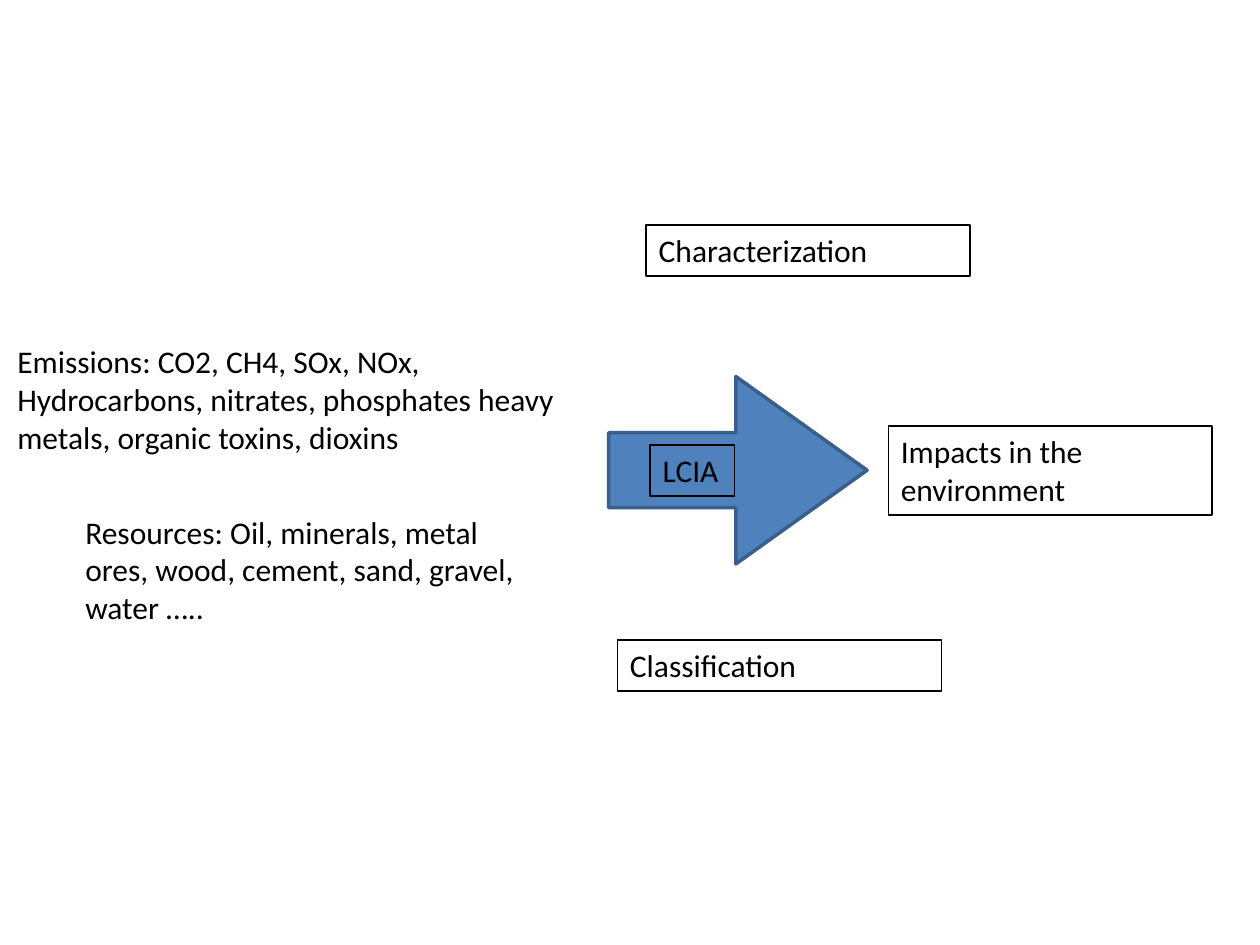
from pptx import Presentation
from pptx.dml.color import RGBColor
from pptx.enum.shapes import MSO_SHAPE
from pptx.enum.text import MSO_AUTO_SIZE
from pptx.util import Cm, Pt

ARROW = MSO_SHAPE.RIGHT_ARROW
GROW = MSO_AUTO_SIZE.SHAPE_TO_FIT_TEXT
BLANK = 6
COLORS = {"text": "000000", "frame": "000000", "arrow": "4F81BD", "edge": "3A5F8C"}


def color(name):
    return RGBColor.from_string(COLORS[name])


deck = Presentation()
deck.slide_width, deck.slide_height = Cm(25.4), Cm(19.05)
slide = deck.slides.add_slide(deck.slide_layouts[BLANK])

arrow = slide.shapes.add_shape(ARROW, Cm(12.27), Cm(7.59), Cm(5.21), Cm(3.78))
arrow.adjustments[0] = 0.4
arrow.adjustments[1] = 0.7
arrow.shadow.inherit = False
arrow.fill.solid()
arrow.fill.fore_color.rgb = color("arrow")
arrow.line.color.rgb = color("edge")
arrow.line.width = Pt(2)

# text, left, top, width, height, framed
labels = [
    ("Resources: Oil, minerals, metal ores, wood, cement, sand, gravel, water …..",
     1.47, 10.21, 9.25, 2.57, False),
    ("Emissions: CO2, CH4, SOx, NOx, Hydrocarbons, nitrates, phosphates heavy metals, "
     "organic toxins, dioxins", 0.1, 6.78, 11.43, 2.57, False),
    ("Impacts in the environment", 17.91, 8.59, 6.53, 1.8, True),
    ("LCIA", 13.11, 8.97, 1.7, 1.03, True),
    ("Characterization", 13.03, 4.54, 6.53, 1.03, True),
    ("Classification", 12.45, 12.9, 6.53, 1.03, True),
]
for text, left, top, width, height, framed in labels:
    box = slide.shapes.add_textbox(Cm(left), Cm(top), Cm(width), Cm(height))
    frame = box.text_frame
    frame.word_wrap = True
    frame.auto_size = GROW
    frame.text = text
    font = frame.paragraphs[0].font
    font.name = "Calibri"
    font.size = Pt(18)
    font.color.rgb = color("text")
    if framed:
        box.line.color.rgb = color("frame")
        box.line.width = Pt(1)

deck.save("out.pptx")
